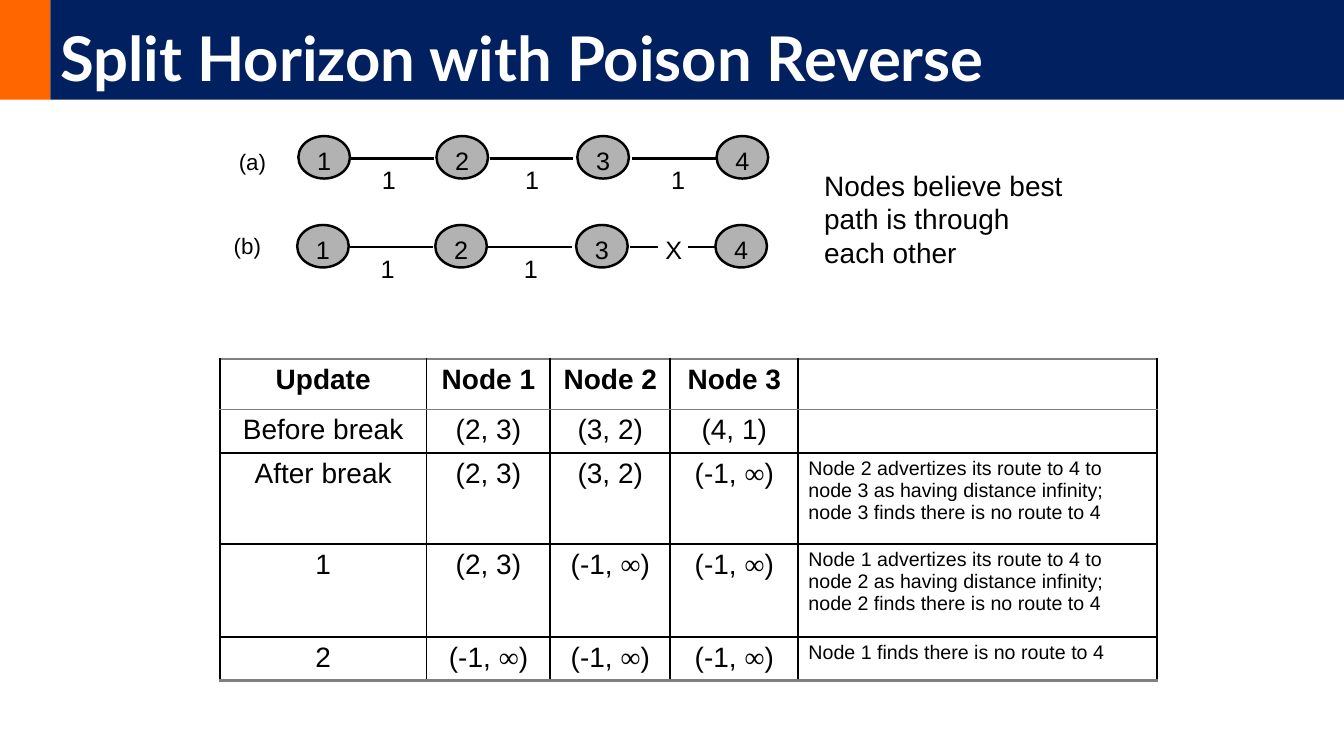
"""Builds the slide on split horizon with poison reverse: two node chains and a table of updates."""
from lxml import etree
from pptx import Presentation
from pptx import util as u
from pptx.dml.color import RGBColor
from pptx.enum import shapes, text
from pptx.oxml import ns

COLORS = {"navy": "002060", "orange": "FF6600", "node": "B2B2B2",
          "ink": "000000", "edge": "808080", "white": "FFFFFF"}
LEFT, CENTER = text.PP_ALIGN.LEFT, text.PP_ALIGN.CENTER

deck = Presentation()
deck.slide_width, deck.slide_height = u.Cm(33.87), u.Cm(19.05)
page = deck.slides.add_slide(deck.slide_layouts[6])


def write(frame, words, size, align=LEFT, bold=False, color="ink", font="Arial"):
    """Fill a frame with one paragraph, setting the infinity sign in a serif font."""
    para = frame.paragraphs[0]
    para.alignment = align
    for piece in filter(None, words.partition("∞")):
        span = para.add_run()
        span.text = piece
        span.font.size = u.Pt(size)
        span.font.bold = bold
        span.font.name = "Times New Roman" if piece == "∞" else font
        span.font.color.rgb = RGBColor.from_string(COLORS[color])
    return para


def add_filled(kind, left, top, width, height, fill):
    """Add a flat shape without outline."""
    shape = page.shapes.add_shape(kind, u.Cm(left), u.Cm(top), u.Cm(width), u.Cm(height))
    shape.shadow.inherit = False
    shape.fill.solid()
    shape.fill.fore_color.rgb = RGBColor.from_string(COLORS[fill])
    shape.line.fill.background()
    return shape


add_filled(shapes.MSO_SHAPE.RECTANGLE, 0, 0, 1.27, 2.51, "orange")
title = add_filled(shapes.MSO_SHAPE.RECTANGLE, 1.27, 0, 32.6, 2.51, "navy")
title.text_frame.word_wrap = True
title.text_frame.vertical_anchor = text.MSO_ANCHOR.BOTTOM
write(title.text_frame, "Split Horizon with Poison Reverse", 44,
      bold=True, color="white", font="Lato").line_spacing = 0.9

node_lefts = [7.52, 11, 14.55, 18.06]
links = [(8.84, 10.95), (12.34, 14.45), (15.93, 18.04)]
broken_links = links[:2] + [(15.9, 16.61), (17.37, 18.06)]
costs = [("1", 9.8, 4.14), ("1", 13.41, 4.14), ("1", 17.09, 4.14)]
broken_costs = costs[:2] + [("X", 17, 3.66)]
chains = [("(a)", 5.77, 3.61, 0, 0, links, costs),
          ("(b)", 5.64, 5.72, -0.03, 2.24, broken_links, broken_costs)]

for name, name_left, name_top, shift, drop, lines, marks in chains:
    for number, left in enumerate(node_lefts, 1):
        node = add_filled(shapes.MSO_SHAPE.OVAL, left + shift, 3.43 + drop, 1.3, 1.07, "node")
        node.line.color.rgb = RGBColor.from_string(COLORS["ink"])
        node.line.width = u.Pt(1.75)
        frame = node.text_frame
        frame.margin_left = frame.margin_right = frame.margin_bottom = 0
        frame.margin_top = u.Cm(0.16)
        frame.word_wrap = False
        frame.vertical_anchor = text.MSO_ANCHOR.MIDDLE
        write(frame, str(number), 18, CENTER)
    for start, end in lines:
        link = page.shapes.add_connector(
            shapes.MSO_CONNECTOR.STRAIGHT, u.Cm(start + shift), u.Cm(3.99 + drop),
            u.Cm(end + shift), u.Cm(3.99 + drop))
        link.line.color.rgb = RGBColor.from_string(COLORS["ink"])
        link.line.width = u.Pt(1.75)
        etree.SubElement(link.element.spPr, ns.qn("a:effectLst"))
    for mark, middle, top in marks:
        box = page.shapes.add_textbox(u.Cm(middle + shift - 0.2), u.Cm(top + drop),
                                      u.Cm(0.4), u.Cm(0.76))
        frame = box.text_frame
        frame.margin_left = frame.margin_right = frame.margin_top = frame.margin_bottom = 0
        frame.word_wrap = False
        write(frame, mark, 18, CENTER)
    box = page.shapes.add_textbox(u.Cm(name_left), u.Cm(name_top), u.Cm(1.32), u.Cm(0.94))
    write(box.text_frame, name, 16)

remark = page.shapes.add_textbox(u.Cm(20.52), u.Cm(4.11), u.Cm(6.8), u.Cm(2.8))
remark.text_frame.word_wrap = True
write(remark.text_frame, "Nodes believe best path is through each other", 20)

widths = [5.21, 3.12, 3.02, 3.23, 9.04]
heights = [1.27, 1.1, 2.29, 2.34, 1.1]
lost = "(-1, ∞)"
updates = [
    ["Update", "Node 1", "Node 2", "Node 3", ""],
    ["Before break", "(2, 3)", "(3, 2)", "(4, 1)", ""],
    ["After break", "(2, 3)", "(3, 2)", lost,
     "Node 2 advertizes its route to 4 to node 3 as having distance infinity; "
     "node 3 finds there is no route to 4"],
    ["1", "(2, 3)", lost, lost,
     "Node 1 advertizes its route to 4 to node 2 as having distance infinity; "
     "node 2 finds there is no route to 4"],
    ["2", lost, lost, lost, "Node 1 finds there is no route to 4"],
]
rules = [("edge", 2), ("edge", 1), ("ink", 1.5), ("ink", 1.5), ("ink", 1.5), ("edge", 2)]

table = page.shapes.add_table(len(heights), len(widths), u.Cm(5.54), u.Cm(9.04),
                              u.Cm(sum(widths)), u.Cm(sum(heights))).table
table.first_row = table.horz_banding = False
for column, width in zip(table.columns, widths):
    column.width = u.Cm(width)
for r, (height, update) in enumerate(zip(heights, updates)):
    table.rows[r].height = u.Cm(height)
    for c, words in enumerate(update):
        cell = table.cell(r, c)
        is_note = c == len(widths) - 1
        write(cell.text_frame, words, 14 if is_note else 20,
              LEFT if is_note else CENTER, bold=r == 0)
        borders = {"lnL": ("ink", 1.5), "lnR": ("ink", 1.5), "lnT": rules[r], "lnB": rules[r + 1]}
        properties = cell._tc.get_or_add_tcPr()
        for side, (color, weight) in borders.items():
            border = etree.SubElement(properties, ns.qn(f"a:{side}"), w=str(u.Pt(weight)))
            paint = etree.SubElement(border, ns.qn("a:solidFill"))
            etree.SubElement(paint, ns.qn("a:srgbClr"), val=COLORS[color])
        cell.fill.background()

deck.save("out.pptx")
